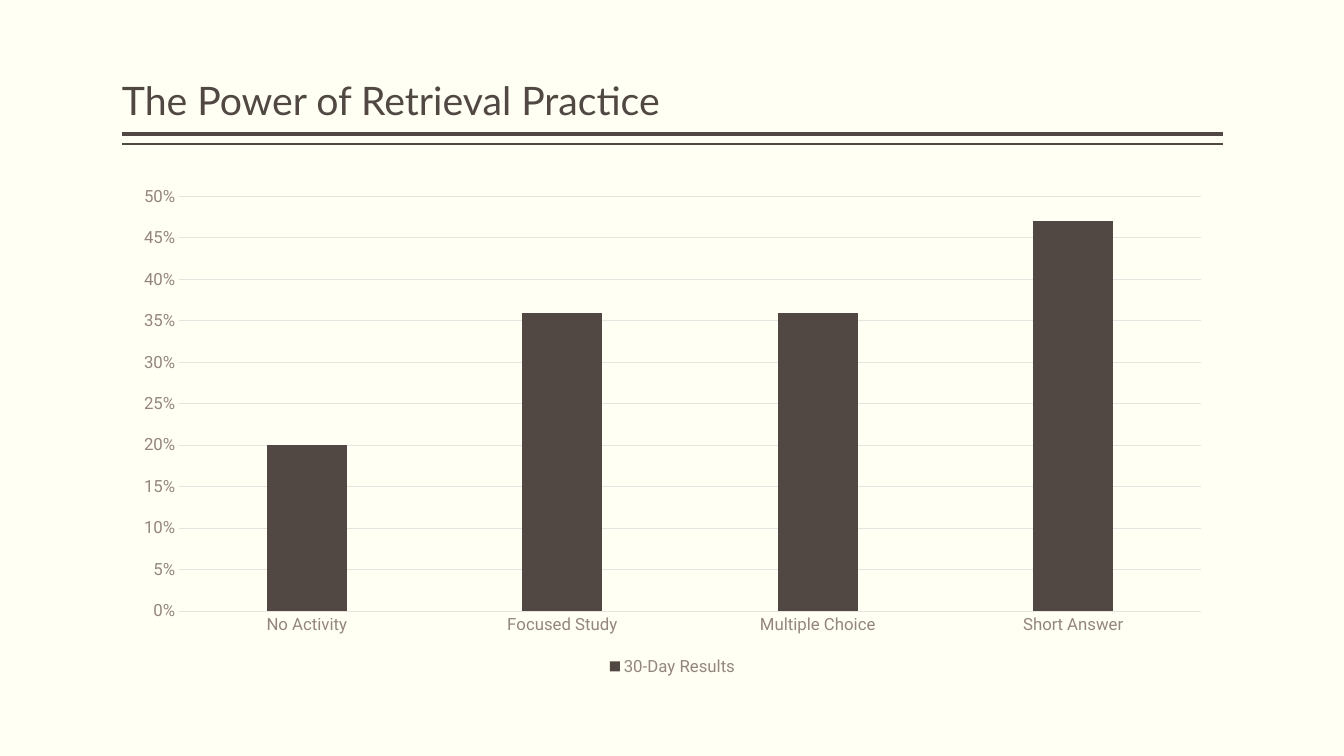
from lxml import etree
from pptx import Presentation
from pptx.chart.data import CategoryChartData
from pptx.dml.color import RGBColor
from pptx.enum.chart import XL_CHART_TYPE, XL_LEGEND_POSITION, XL_TICK_MARK
from pptx.enum.shapes import MSO_CONNECTOR
from pptx.enum.text import MSO_ANCHOR
from pptx.oxml.ns import qn
from pptx.util import Inches, Pt

COLUMNS = XL_CHART_TYPE.COLUMN_CLUSTERED
LEGEND_BOTTOM = XL_LEGEND_POSITION.BOTTOM
NO_TICK = XL_TICK_MARK.NONE
STRAIGHT = MSO_CONNECTOR.STRAIGHT
BOTTOM = MSO_ANCHOR.BOTTOM

WIDTH, HEIGHT = 13.33, 7.5
MARGIN = 1.21
CONTENT_WIDTH = 10.92
RIGHT = MARGIN + CONTENT_WIDTH

PAPER, DARK, MUTED, GRID = "FFFFF3", "514843", "94867E", "E6E3E1"

RESULTS = {
    "No Activity": 0.20,
    "Focused Study": 0.36,
    "Multiple Choice": 0.36,
    "Short Answer": 0.47,
}


def color(hex_string):
    return RGBColor.from_string(hex_string)


def style_font(font, name, size, hex_string):
    font.name = name
    font.size = Pt(size)
    font.color.rgb = color(hex_string)


def style_line(line, hex_string, width):
    line.color.rgb = color(hex_string)
    line.width = Pt(width)


def add_text(slide, text, left, top, width, height, *, font, size, hex_string,
             anchor=BOTTOM, line_spacing=1.0):
    shape = slide.shapes.add_textbox(
        Inches(left), Inches(top), Inches(width), Inches(height))
    frame = shape.text_frame
    frame.word_wrap = True
    frame.vertical_anchor = anchor
    frame.margin_left = frame.margin_right = 0
    paragraph = frame.paragraphs[0]
    paragraph.line_spacing = line_spacing
    run = paragraph.add_run()
    run.text = text
    style_font(run.font, font, size, hex_string)


def add_rule(slide, top, width):
    connector = slide.shapes.add_connector(
        STRAIGHT, Inches(RIGHT), Inches(top), Inches(MARGIN), Inches(top))
    style_line(connector.line, DARK, width)
    etree.SubElement(connector._element.spPr, qn("a:effectLst"))


def style_axis(axis):
    axis.major_tick_mark = axis.minor_tick_mark = NO_TICK
    style_font(axis.tick_labels.font, "Roboto", 12, MUTED)


def add_results_chart(slide, left, top, width, height):
    data = CategoryChartData(number_format="0%")
    data.categories = list(RESULTS)
    data.add_series("30-Day Results", list(RESULTS.values()))
    chart = slide.shapes.add_chart(
        COLUMNS, Inches(left), Inches(top), Inches(width), Inches(height), data).chart
    style_font(chart.font, "Roboto", 10, DARK)
    chart.has_title = False

    chart.has_legend = True
    chart.legend.position = LEGEND_BOTTOM
    chart.legend.include_in_layout = False
    style_font(chart.legend.font, "Roboto", 12, MUTED)

    plot = chart.plots[0]
    plot.gap_width = 219
    plot.overlap = -27
    plot.vary_by_categories = False
    fill = plot.series[0].format.fill
    fill.solid()
    fill.fore_color.rgb = color(DARK)

    style_axis(chart.category_axis)
    style_line(chart.category_axis.format.line, GRID, 0.75)

    value_axis = chart.value_axis
    style_axis(value_axis)
    value_axis.minimum_scale = 0
    value_axis.maximum_scale = 0.5
    value_axis.major_unit = 0.05
    value_axis.tick_labels.number_format = "0%"
    value_axis.tick_labels.number_format_is_linked = False
    value_axis.format.line.fill.background()
    value_axis.has_major_gridlines = True
    style_line(value_axis.major_gridlines.format.line, GRID, 0.75)


def main():
    presentation = Presentation()
    presentation.slide_width = Inches(WIDTH)
    presentation.slide_height = Inches(HEIGHT)
    slide = presentation.slides.add_slide(presentation.slide_layouts[6])
    background = slide.background.fill
    background.solid()
    background.fore_color.rgb = color(PAPER)

    for top, width in ((1.33, 3), (1.43, 1)):
        add_rule(slide, top, width)
    add_text(slide, "The Power of Retrieval Practice", MARGIN, 0.08, CONTENT_WIDTH, 1.2,
             font="Lato", size=28, hex_string=DARK, line_spacing=0.9)
    add_results_chart(slide, MARGIN, 1.75, CONTENT_WIDTH, 5)
    presentation.save("out.pptx")


if __name__ == "__main__":
    main()
